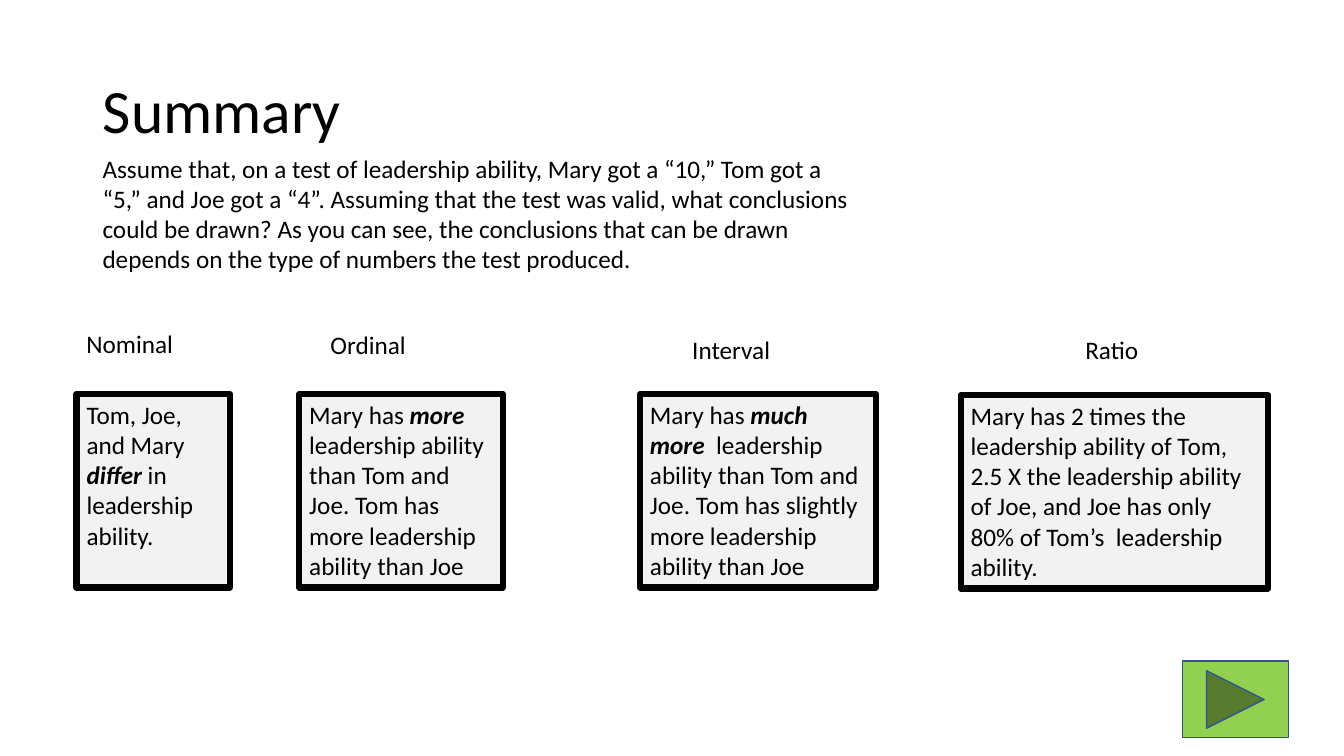
from pptx import Presentation
from pptx.dml.color import RGBColor
from pptx.enum.shapes import MSO_SHAPE as Shape
from pptx.enum.text import MSO_ANCHOR as Anchor, PP_ALIGN as Align
from pptx.util import Pt

BLACK = RGBColor(0x00, 0x00, 0x00)
WHITE = RGBColor(0xFF, 0xFF, 0xFF)
PALE_GRAY = RGBColor(0xF2, 0xF2, 0xF2)
GREEN = RGBColor(0x92, 0xD0, 0x50)
BLUE = RGBColor(0x32, 0x54, 0x91)

BODY = {"name": "Calibri", "size": Pt(18), "bold": False, "italic": False}
EMPHASIS = BODY | {"bold": True, "italic": True}
HEADING = BODY | {"size": Pt(44)}

LABEL_HEIGHT = 28.8
BOX_HEIGHT = 138.2

INTRO = (
    "Assume that, on a test of leadership ability, Mary got a “10,” Tom got a “5,” "
    "and Joe got a “4”. Assuming that the test was valid, what conclusions could be "
    "drawn? As you can see, the conclusions that can be drawn depends on the type of "
    "numbers the test produced."
)

# Each scale: name, label (left, top, width), box (left, top, width),
# and conclusion as plain, emphasized, plain text
SCALES = [
    ("Nominal", (54.7, 231.1, 77), (54.7, 281.5, 109.4),
     ("Tom, Joe, and Mary ", "differ", " in leadership ability.")),
    ("Ordinal", (229, 231.8, 69), (213.8, 281.5, 145.4),
     ("Mary has ", "more", "  leadership ability than Tom and Joe. "
      "Tom has more leadership ability than Joe")),
    ("Interval", (487.4, 235.4, 77), (457.2, 281.5, 168.5),
     ("Mary has ", "much more", "  leadership ability than Tom and Joe. "
      "Tom has slightly more leadership ability than Joe")),
    ("Ratio", (768.2, 235.4, 52.6), (686.2, 282.2, 219.6),
     ("Mary has 2 times the leadership ability of Tom, 2.5 X the leadership ability "
      "of Joe, and Joe has only 80% of Tom’s  leadership ability.",)),
]


def write(frame, pieces, plain=BODY, anchor=Anchor.TOP):
    """Fill a frame with pieces of text, every second one emphasized."""
    frame.word_wrap = True
    frame.vertical_anchor = anchor
    paragraph = frame.paragraphs[0]
    paragraph.alignment = Align.LEFT
    for index, piece in enumerate(pieces):
        run = paragraph.add_run()
        run.text = piece
        for attribute, value in (EMPHASIS if index % 2 else plain).items():
            setattr(run.font, attribute, value)
        run.font.color.rgb = BLACK


def add_title(slide, text):
    title = slide.shapes.title
    place = {"left": Pt(66.2), "top": Pt(28.8), "width": Pt(828), "height": Pt(104.4)}
    for attribute, value in place.items():
        setattr(title, attribute, value)
    write(title.text_frame, [text], HEADING, Anchor.MIDDLE)
    title.text_frame.paragraphs[0].line_spacing = 0.9


def add_text(slide, text, left, top, width, height):
    area = slide.shapes.add_textbox(Pt(left), Pt(top), Pt(width), Pt(height))
    write(area.text_frame, [text])


def add_panel(slide, kind, place, fill, line, line_width):
    panel = slide.shapes.add_shape(kind, *map(Pt, place))
    panel.shadow.inherit = False
    panel.fill.solid()
    panel.fill.fore_color.rgb = fill
    panel.line.color.rgb = line
    panel.line.width = Pt(line_width)
    return panel


def main():
    presentation = Presentation()
    presentation.slide_width, presentation.slide_height = Pt(960), Pt(540)
    slide = presentation.slides.add_slide(presentation.slide_layouts[5])
    slide.background.fill.solid()
    slide.background.fill.fore_color.rgb = WHITE

    # Title and introduction
    add_title(slide, "Summary")
    add_text(slide, INTRO, 66.2, 105.8, 559.4, 94.3)

    # Scale labels above their conclusions
    for name, label_place, box_place, conclusion in SCALES:
        add_text(slide, name, *label_place, LABEL_HEIGHT)
        box = add_panel(slide, Shape.RECTANGLE, (*box_place, BOX_HEIGHT),
                        PALE_GRAY, BLACK, 4.5)
        write(box.text_frame, conclusion)

    # Button to the next slide
    add_panel(slide, Shape.ACTION_BUTTON_FORWARD_OR_NEXT,
              (844.6, 472.3, 75.6, 54.7), GREEN, BLUE, 1)

    presentation.save("out.pptx")


if __name__ == "__main__":
    main()
